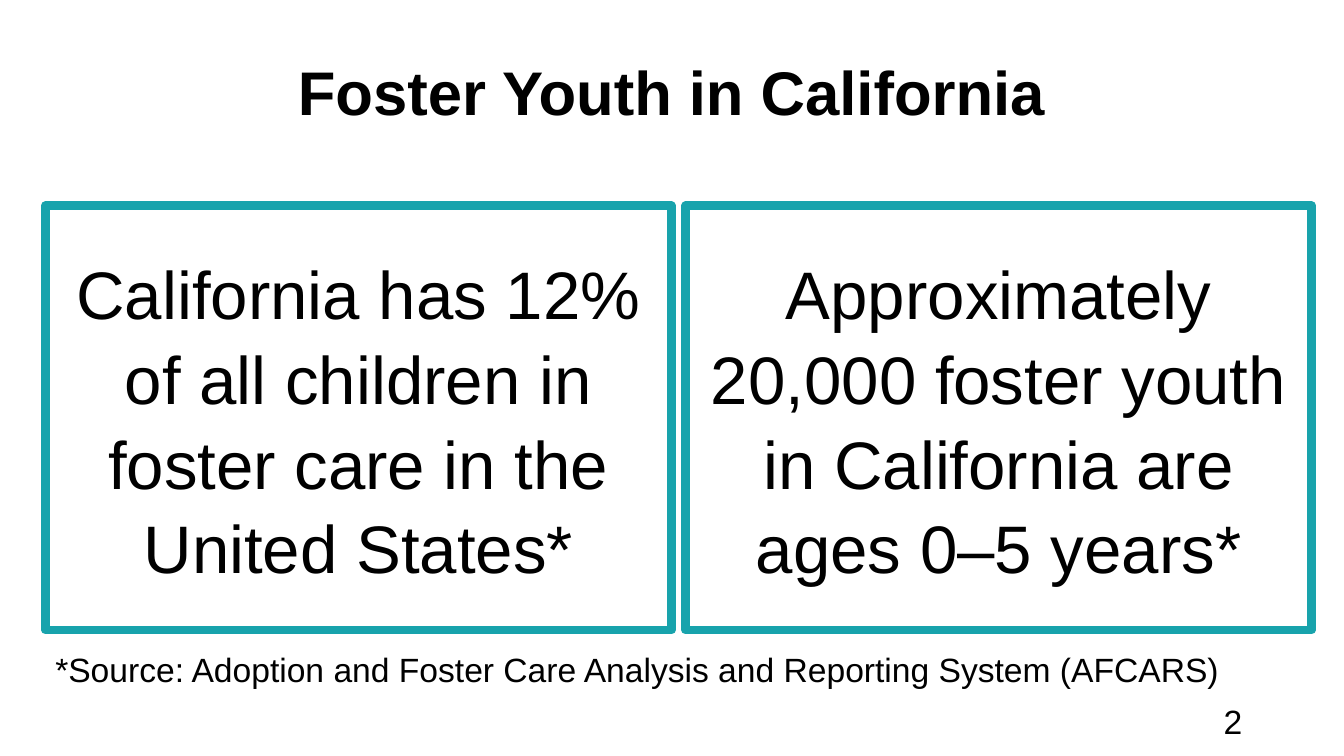
from pptx import Presentation
from pptx.dml.color import RGBColor
from pptx.enum.shapes import MSO_SHAPE
from pptx.enum.text import MSO_ANCHOR, PP_ALIGN
from pptx.util import Inches, Pt

RECTANGLE = MSO_SHAPE.RECTANGLE
TOP, MIDDLE = MSO_ANCHOR.TOP, MSO_ANCHOR.MIDDLE
LEFT, CENTER, RIGHT = PP_ALIGN.LEFT, PP_ALIGN.CENTER, PP_ALIGN.RIGHT

TITLE = "Foster Youth in California"
FACTS = [
    "California has 12% of all children in foster care in the United States*",
    "Approximately 20,000 foster youth in California are ages 0–5 years*",
]
SOURCE = "*Source: Adoption and Foster Care Analysis and Reporting System (AFCARS)"
PAGE_NUMBER = "2"

FONT, BLACK, TEAL = "Arial", "000000", "18A3AC"
SLIDE_WIDTH, SLIDE_HEIGHT = 13.33, 7.5
MARGIN = 0.45
FACT_TOP, FACT_WIDTH, FACT_HEIGHT, FACT_GAP = 2.04, 6.21, 4.21, 0.14


def color(hex_code):
    return RGBColor.from_string(hex_code)


def write(box, text, size, align, anchor, bold=False):
    """Fill a box with one formatted paragraph and return that paragraph."""
    frame = box.text_frame
    frame.word_wrap = True
    frame.vertical_anchor = anchor
    para = frame.paragraphs[0]
    para.text = text
    para.alignment = align
    font = para.runs[0].font
    font.name, font.size, font.bold = FONT, Pt(size), bold
    font.color.rgb = color(BLACK)
    return para


def add_text(page, place, *text_format, **options):
    box = page.shapes.add_textbox(*map(Inches, place))
    return write(box, *text_format, **options)


def add_fact(page, index, text):
    left = MARGIN + index * (FACT_WIDTH + FACT_GAP)
    place = (left, FACT_TOP, FACT_WIDTH, FACT_HEIGHT)
    box = page.shapes.add_shape(RECTANGLE, *map(Inches, place))
    box.shadow.inherit = False
    box.fill.background()
    box.line.color.rgb = color(TEAL)
    box.line.width = Pt(6)
    para = write(box, text, 48, CENTER, MIDDLE)
    para.line_spacing = 1.05


def main():
    deck = Presentation()
    deck.slide_width, deck.slide_height = Inches(SLIDE_WIDTH), Inches(SLIDE_HEIGHT)
    page = deck.slides.add_slide(deck.slide_layouts[6])

    add_text(page, (0, 0, SLIDE_WIDTH, 1.8), TITLE, 44, CENTER, MIDDLE, bold=True)
    for index, fact in enumerate(FACTS):
        add_fact(page, index, fact)
    source = add_text(page, (MARGIN, 6.43, 12.57, 0.4), SOURCE, 24, LEFT, TOP)
    source.line_spacing = 0.9
    source.space_before = Pt(10)
    add_text(page, (9.42, 6.95, 3, 0.4), PAGE_NUMBER, 24, RIGHT, MIDDLE)

    deck.save("out.pptx")


if __name__ == "__main__":
    main()
